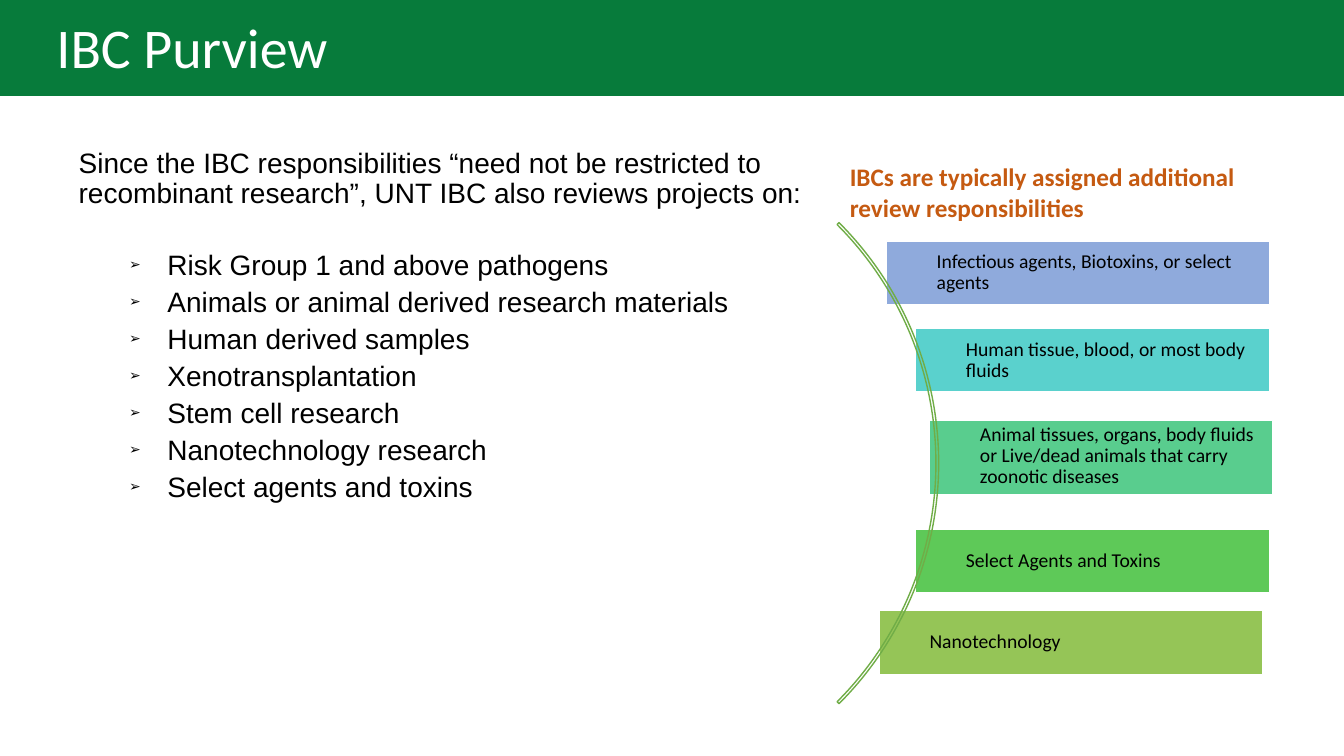
import pptx
import pptx.util
import pptx.dml.color
import pptx.enum.shapes
import pptx.enum.text
import pptx.oxml.ns
from lxml import etree

Inches, Pt = pptx.util.Inches, pptx.util.Pt
RGBColor = pptx.dml.color.RGBColor
SHAPE = pptx.enum.shapes.MSO_SHAPE
ANCHOR = pptx.enum.text.MSO_ANCHOR
LEFT = pptx.enum.text.PP_ALIGN.LEFT

BLACK = RGBColor(0x00, 0x00, 0x00)
WHITE = RGBColor(0xFF, 0xFF, 0xFF)
BANNER_GREEN = RGBColor(0x07, 0x7B, 0x3B)
ARC_GREEN = RGBColor(0x70, 0xAD, 0x47)
ORANGE = RGBColor(0xC5, 0x5A, 0x11)

TITLE = "IBC Purview"
INTRO = ("Since the IBC responsibilities “need not be restricted to recombinant "
         "research”, UNT IBC also reviews projects on:")
PROJECTS = [
    "Risk Group 1 and above pathogens",
    "Animals or animal derived research materials",
    "Human derived samples",
    "Xenotransplantation",
    "Stem cell research",
    "Nanotechnology research",
    "Select agents and toxins",
]
HEADING = "IBCs are typically assigned additional review responsibilities"
DUTIES = [
    ("Infectious agents, Biotoxins, or select agents",
     (8.79, 2.39, 3.8, 0.63), RGBColor(0x8F, 0xAA, 0xDC), ANCHOR.MIDDLE),
    ("Human tissue, blood, or most body fluids",
     (9.08, 3.26, 3.51, 0.63), RGBColor(0x5A, 0xD1, 0xCD), ANCHOR.MIDDLE),
    ("Animal tissues, organs, body fluids or Live/dead animals that carry zoonotic diseases",
     (9.22, 4.17, 3.4, 0.74), RGBColor(0x59, 0xCD, 0x8E), ANCHOR.TOP),
    ("Select Agents and Toxins",
     (9.08, 5.25, 3.51, 0.63), RGBColor(0x5E, 0xC9, 0x58), ANCHOR.MIDDLE),
    ("Nanotechnology",
     (8.72, 6.06, 3.8, 0.63), RGBColor(0x95, 0xC5, 0x57), ANCHOR.MIDDLE),
]


def place(box, at):
    """Move and size a box, in inches."""
    box.left, box.top, box.width, box.height = map(Inches, at)


def prepare(frame, anchor):
    """Give a text frame fixed size, wrapping and an anchor."""
    frame.word_wrap = True
    frame.auto_size = pptx.enum.text.MSO_AUTO_SIZE.NONE
    frame.vertical_anchor = anchor


def style(para, name, size, color, spacing=0.9, bold=False):
    """Set the font, alignment and line spacing of a paragraph."""
    para.alignment = LEFT
    para.line_spacing = spacing
    para.font.name, para.font.size, para.font.bold = name, Pt(size), bold
    para.font.color.rgb = color


def set_bullet(para, margin, indent, char=None):
    """Set the indents of a paragraph and its bullet, if any."""
    props = para._p.get_or_add_pPr()
    props.set("marL", str(Inches(margin)))
    props.set("indent", str(Inches(indent)))
    parts = [("a:buNone", {})]
    if char:
        parts = [("a:buSzPct", {"val": "50000"}),
                 ("a:buFont", {"typeface": "Arial"}),
                 ("a:buChar", {"char": char})]
    for tag, values in parts:
        etree.SubElement(props, pptx.oxml.ns.qn(tag), values)


def add_shape(page, kind, at, line, fill=None):
    """Add a flat preset shape with a one-point outline."""
    shape = page.shapes.add_shape(kind, *map(Inches, at))
    shape.shadow.inherit = False
    shape.line.color.rgb = line
    shape.line.width = Pt(1)
    if fill is None:
        shape.fill.background()
    else:
        shape.fill.solid()
        shape.fill.fore_color.rgb = fill
    return shape


def add_title(page):
    """Place the title on its green banner."""
    banner = add_shape(page, SHAPE.RECTANGLE, (0, -0.05, 13.33, 1), BANNER_GREEN, BANNER_GREEN)
    title = page.shapes.title
    title.element.addprevious(banner.element)
    place(title, (0.46, 0.13, 7.87, 0.73))
    prepare(title.text_frame, ANCHOR.MIDDLE)
    title.text_frame.text = TITLE
    style(title.text_frame.paragraphs[0], "Calibri", 40, WHITE)


def add_projects(page):
    """Fill the body with the introduction and the bulleted projects."""
    body = page.placeholders[1]
    place(body, (0.68, 1.43, 7.88, 5.58))
    frame = body.text_frame
    prepare(frame, ANCHOR.TOP)
    frame.text = "\n".join([INTRO, *PROJECTS])
    for number, para in enumerate(frame.paragraphs):
        para.level = 1
        if number == 0:
            set_bullet(para, 0, 0)
        else:
            set_bullet(para, 0.88, -0.38, "➢")
        para.space_before = Pt({0: 0, 1: 30}.get(number, 4.8))
        style(para, "Arial", 20, BLACK)


def add_duties(page):
    """Draw the coloured duty boxes, their heading and the arc."""
    for text, at, color, anchor in DUTIES:
        box = add_shape(page, SHAPE.RECTANGLE, at, WHITE, color)
        frame = box.text_frame
        prepare(frame, anchor)
        frame.margin_left = Inches(0.5)
        frame.margin_top = frame.margin_right = frame.margin_bottom = Inches(0.04)
        frame.text = text
        style(frame.paragraphs[0], "Calibri", 14, BLACK)

    heading = page.shapes.add_textbox(*map(Inches, (8.33, 1.55, 4.5, 0.71)))
    prepare(heading.text_frame, ANCHOR.MIDDLE)
    heading.text_frame.text = HEADING
    style(heading.text_frame.paragraphs[0], "Calibri", 18, ORANGE, 1.0, True)

    arc = add_shape(page, SHAPE.BLOCK_ARC, (2.56, 1.22, 6.75, 6.75), ARC_GREEN)
    for index, value in enumerate((189, 27, 0.004)):
        arc.adjustments[index] = value


def main():
    """Build the slide and save the deck."""
    deck = pptx.Presentation()
    deck.slide_width, deck.slide_height = Inches(13.33), Inches(7.5)
    page = deck.slides.add_slide(deck.slide_layouts[1])
    add_title(page)
    add_projects(page)
    add_duties(page)
    deck.save("out.pptx")


if __name__ == "__main__":
    main()
